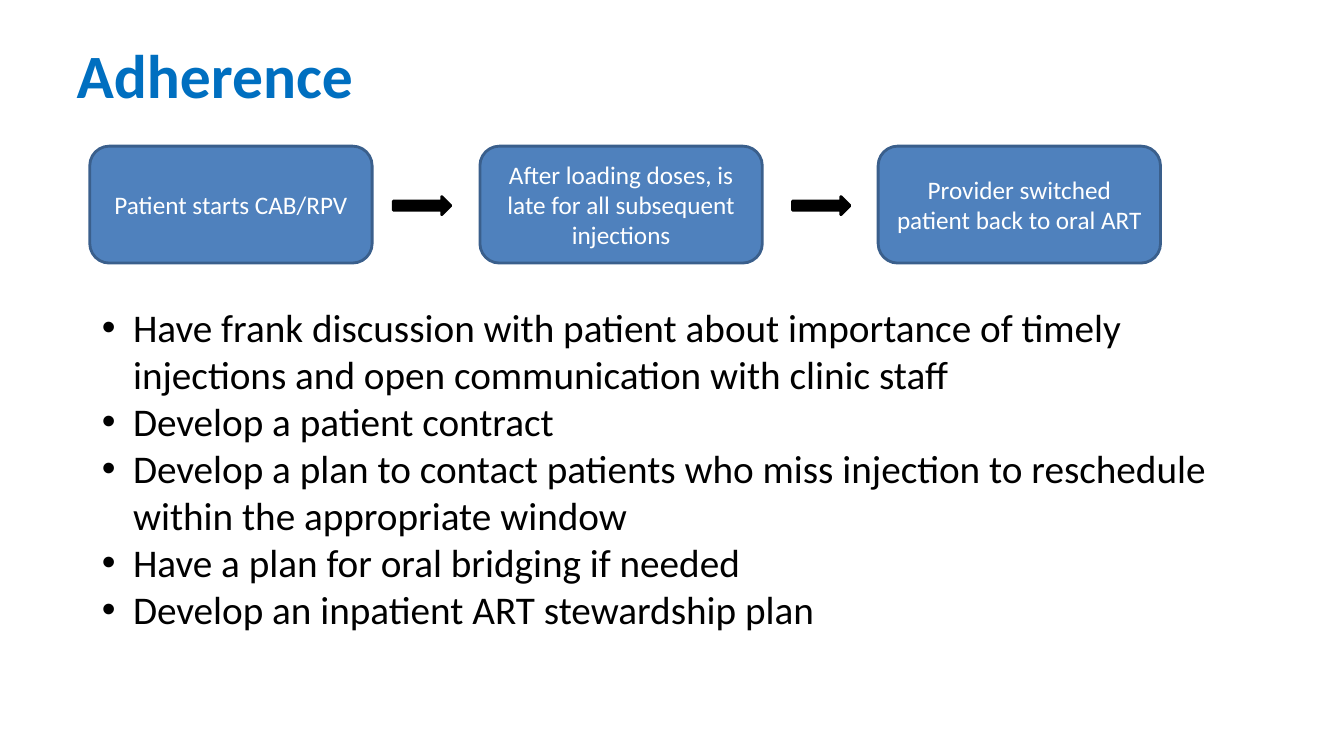
from lxml import etree
from pptx import Presentation
from pptx.dml.color import RGBColor
from pptx.enum.shapes import MSO_SHAPE
from pptx.enum.text import MSO_ANCHOR, MSO_AUTO_SIZE, PP_ALIGN
from pptx.oxml.ns import qn
from pptx.util import Inches, Pt

ROUNDED = MSO_SHAPE.ROUNDED_RECTANGLE
ARROW = MSO_SHAPE.RIGHT_ARROW
TOP, MIDDLE = MSO_ANCHOR.TOP, MSO_ANCHOR.MIDDLE
LEFT, CENTER = PP_ALIGN.LEFT, PP_ALIGN.CENTER
GROW = MSO_AUTO_SIZE.SHAPE_TO_FIT_TEXT

WIDTH, HEIGHT = Inches(13.33), Inches(7.5)
FONT = "Calibri"
COLORS = {
    "title": "006FC0",
    "step": "4F81BD",
    "step_edge": "3A5F8C",
    "step_text": "FFFFFF",
    "ink": "000000",
}

# Left edges are percentages of the slide width.
STEPS = [
    (6.68, "Patient starts CAB/RPV"),
    (35.71, "After loading doses, is late for all subsequent injections"),
    (65.34, "Provider switched patient back to oral ART"),
]
ARROW_LEFTS = [29.26, 58.96]
ACTIONS = [
    "Have frank discussion with patient about importance of timely "
    "injections and open communication with clinic staff",
    "Develop a patient contract",
    "Develop a plan to contact patients who miss injection to reschedule "
    "within the appropriate window",
    "Have a plan for oral bridging if needed",
    "Develop an inpatient ART stewardship plan",
]


def color(name):
    return RGBColor.from_string(COLORS[name])


def area(left, top, width, height):
    """Turn percentages of the slide's size into lengths."""
    return (int(WIDTH * left / 100), int(HEIGHT * top / 100),
            int(WIDTH * width / 100), int(HEIGHT * height / 100))


def style_text(frame, size, color_name, align, bold=False):
    for para in frame.paragraphs:
        para.alignment = align
        para.space_before = Pt(0)
        for span in para.runs:
            span.font.name = FONT
            span.font.size = Pt(size)
            span.font.bold = bold
            span.font.color.rgb = color(color_name)


def place_text(box, bounds, text):
    """Move a placeholder and fill it, without margins, from the top."""
    box.left, box.top, box.width, box.height = area(*bounds)
    frame = box.text_frame
    frame.text = text
    frame.word_wrap = True
    frame.auto_size = GROW
    frame.vertical_anchor = TOP
    frame.margin_left = frame.margin_right = 0
    frame.margin_top = frame.margin_bottom = 0
    return frame


def add_bullet(para):
    properties = para._p.get_or_add_pPr()
    properties.set("marL", str(Inches(0.56)))
    properties.set("indent", str(Inches(-0.31)))
    etree.SubElement(properties, qn("a:buFont")).set("typeface", "Arial")
    etree.SubElement(properties, qn("a:buChar")).set("char", "•")


def add_block(page, kind, bounds, fill, edge):
    block = page.shapes.add_shape(kind, *area(*bounds))
    block.shadow.inherit = False
    block.fill.solid()
    block.fill.fore_color.rgb = color(fill)
    block.line.color.rgb = color(edge)
    block.line.width = Pt(2)
    return block


def add_step(page, left, text):
    box = add_block(page, ROUNDED, (left, 19.33, 21.01, 15.47), "step", "step_edge")
    frame = box.text_frame
    frame.text = text
    frame.word_wrap = True
    frame.vertical_anchor = MIDDLE
    style_text(frame, 18, "step_text", CENTER)


def main():
    deck = Presentation()
    deck.slide_width, deck.slide_height = WIDTH, HEIGHT
    page = deck.slides.add_slide(deck.slide_layouts[1])

    title = place_text(page.shapes.title, (5.7, 4.93, 46.06, 10.13), "Adherence")
    style_text(title, 44, "title", LEFT, bold=True)

    for left, text in STEPS:
        add_step(page, left, text)
    for left in ARROW_LEFTS:
        add_block(page, ARROW, (left, 26, 4.28, 2.4), "ink", "ink")

    body = place_text(page.placeholders[1], (5.7, 40.13, 88.75, 50.27),
                      "\n".join(ACTIONS))
    for para in body.paragraphs:
        add_bullet(para)
    style_text(body, 28, "ink", LEFT)

    deck.save("out.pptx")


if __name__ == "__main__":
    main()
